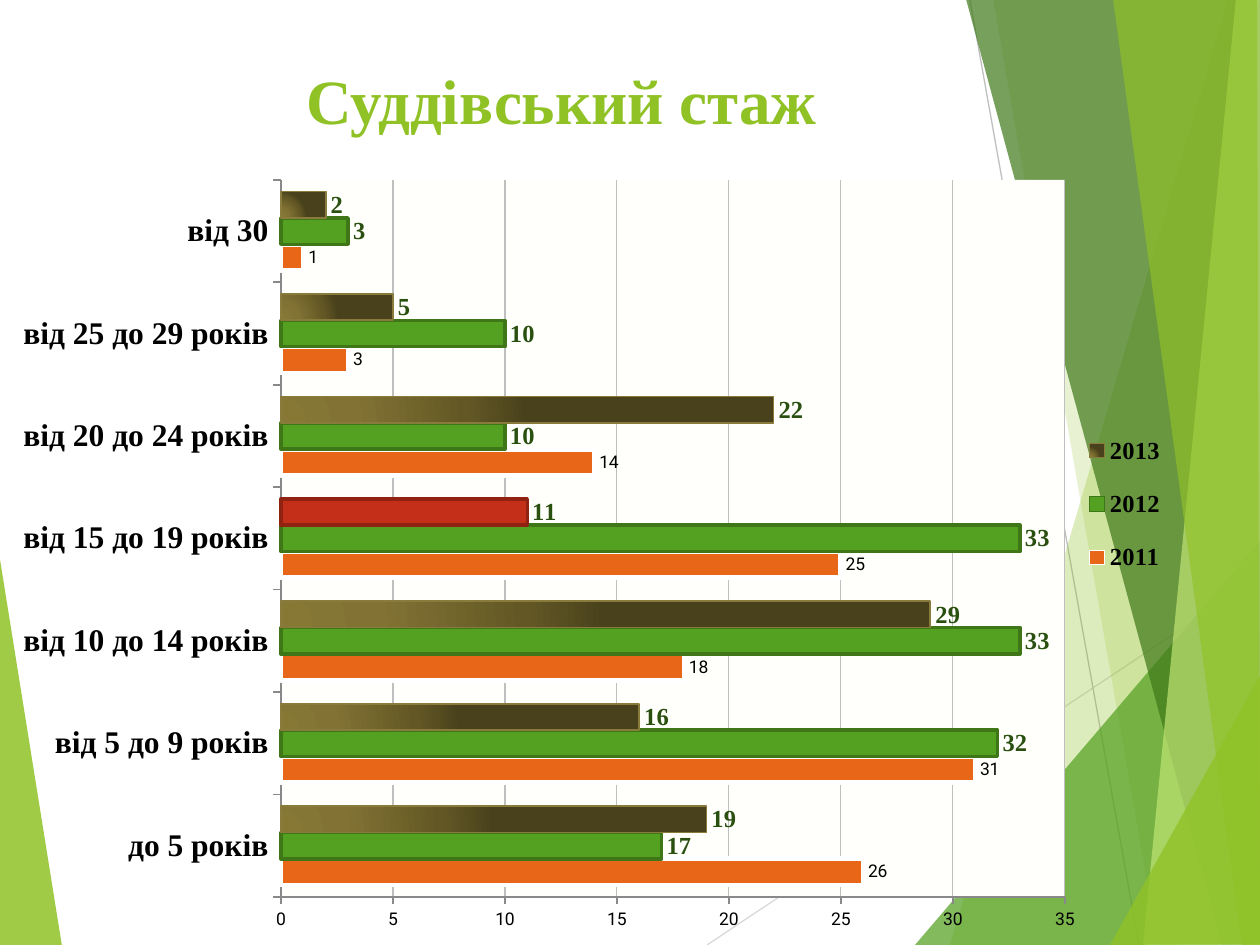
from lxml import etree
from pptx import Presentation
from pptx.chart.data import CategoryChartData
from pptx.dml.color import RGBColor
from pptx.enum.chart import XL_CHART_TYPE, XL_LABEL_POSITION, XL_LEGEND_POSITION, XL_TICK_MARK
from pptx.enum.shapes import MSO_CONNECTOR
from pptx.enum.text import MSO_ANCHOR, PP_ALIGN
from pptx.oxml import parse_xml
from pptx.oxml.ns import nsdecls, qn
from pptx.util import Emu, Pt

PX = 914400 / 126
BAR, RIGHT = XL_CHART_TYPE.BAR_CLUSTERED, XL_LEGEND_POSITION.RIGHT
OUTSIDE, OUTSIDE_END = XL_TICK_MARK.OUTSIDE, XL_LABEL_POSITION.OUTSIDE_END
STRAIGHT, MIDDLE, CENTER = MSO_CONNECTOR.STRAIGHT, MSO_ANCHOR.MIDDLE, PP_ALIGN.CENTER

BLACK = RGBColor(0x00, 0x00, 0x00)
WHITE = RGBColor(0xFF, 0xFF, 0xFF)
LIME = RGBColor(0x90, 0xC2, 0x26)
PALE_LIME = RGBColor(0xC0, 0xE4, 0x74)
GREEN = RGBColor(0x54, 0xA0, 0x21)
FOREST = RGBColor(0x3F, 0x78, 0x19)
GREEN_EDGE = RGBColor(0x3E, 0x76, 0x18)
LABEL_GREEN = RGBColor(0x2A, 0x50, 0x10)
ORANGE = RGBColor(0xE7, 0x66, 0x18)
RED = RGBColor(0xC4, 0x2F, 0x1A)
RED_EDGE = RGBColor(0x90, 0x22, 0x12)
BROWN = RGBColor(0x49, 0x41, 0x1B)
BROWN_EDGE = RGBColor(0x89, 0x7B, 0x3C)
IVORY = RGBColor(0xFF, 0xFF, 0xFB)
LIGHT_GRAY = RGBColor(0xD9, 0xD9, 0xD9)
GRAY = RGBColor(0xBF, 0xBF, 0xBF)
AXIS_GRAY = RGBColor(0x89, 0x89, 0x89)
GRADIENT = [(0, "877836"), (30, "827334"), (75, "635825"), (100, "49411B")]

SERIF, SANS = "Times New Roman", "Roboto"
SERIF_LABEL = {"size": Pt(14), "bold": True, "name": SERIF}
BAR_LABEL = {**SERIF_LABEL, "color": LABEL_GREEN}
PLAIN_LABEL = {"size": Pt(10), "name": SANS, "color": BLACK}

# Background facets: corner points in px, fill, opacity in percent
LEFT_FACET = ([(-1, 553), (62, 946), (-1, 945)], LIME, 85)
RIGHT_FACETS = [
    ([(1228, 0), (950, 945), (1262, 946), (1261, 1)], LIME, 30),
    ([(993, -1), (1158, 945), (1261, 945), (1261, -1)], LIME, 20),
    ([(915, 945), (1260, 541), (1261, 945)], GREEN, 72),
    ([(966, -1), (1222, 945), (1261, 944), (1261, -1)], FOREST, 70),
    ([(1236, -1), (1143, 945), (1261, 945), (1260, -1)], PALE_LIME, 70),
    ([(1113, -1), (1242, 945), (1260, 945), (1257, -1)], LIME, 65),
    ([(1110, 945), (1261, 674), (1261, 944)], LIME, 80),
]
RAYS = [((707, 945), (1261, 576), LIGHT_GRAY), ((970, 0), (1139, 945), GRAY)]

CATEGORIES = ["до 5 років", "від 5 до 9 років", "від 10 до 14 років", "від 15 до 19 років",
              "від 20 до 24 років", "від 25 до 29 років", "від 30"]
# Name, values, fill, edge, edge width, label font
SERIES = [
    ("2011", (26, 31, 18, 25, 14, 3, 1), ORANGE, WHITE, 2.75, PLAIN_LABEL),
    ("2012", (17, 32, 33, 33, 10, 10, 3), GREEN, GREEN_EDGE, 2, BAR_LABEL),
    ("2013", (19, 16, 29, 11, 22, 5, 2), BROWN, BROWN_EDGE, 1, BAR_LABEL),
]
CHART_BOX = (0, 165, 1196, 780)
PLOT_BOX = (281, 180, 784, 717)
LEGEND_BOX = (1080, 411, 90, 186)


def px(*lengths):
    return [Emu(round(length * PX)) for length in lengths]


def set_font(font, values):
    for name, value in values.items():
        if name == "color":
            font.color.rgb = value
        else:
            setattr(font, name, value)


def set_line(line, color, width):
    line.color.rgb = color
    line.width = Pt(width)


def add_facet(slide, points, color, opacity):
    builder = slide.shapes.build_freeform(*points[0], scale=PX)
    builder.add_line_segments(points[1:], close=True)
    shape = builder.convert_to_shape()
    shape.shadow.inherit = False
    shape.line.fill.background()
    shape.fill.solid()
    shape.fill.fore_color.rgb = color
    rgb = shape.element.spPr.find(f".//{qn('a:srgbClr')}")
    etree.SubElement(rgb, qn("a:alpha"), val=str(opacity * 1000))


def add_ray(slide, start, end, color):
    ray = slide.shapes.add_connector(STRAIGHT, *px(*start, *end))
    set_line(ray.line, color, 0.75)
    etree.SubElement(ray.element.spPr, qn("a:effectLst"))


def format_title(title):
    # The title comes after the background in drawing order
    title.element.getparent().append(title.element)
    title.left, title.top, title.width, title.height = px(63, 44, 998, 111)
    frame = title.text_frame
    frame.text = "Суддівський стаж"
    frame.vertical_anchor = MIDDLE
    paragraph = frame.paragraphs[0]
    paragraph.alignment = CENTER
    set_font(paragraph.runs[0].font, {"size": Pt(36), "bold": True, "name": SERIF, "color": LIME})


def layout_xml(box, inner=False):
    left, top, width, height = CHART_BOX
    shares = ((box[0] - left) / width, (box[1] - top) / height, box[2] / width, box[3] / height)
    target = '<c:layoutTarget val="inner"/>' if inner else ""
    modes = '<c:xMode val="edge"/><c:yMode val="edge"/>'
    sizes = "".join(f'<c:{tag} val="{share:.4f}"/>' for tag, share in zip("xywh", shares))
    return parse_xml(f'<c:layout {nsdecls("c")}><c:manualLayout>{target}{modes}{sizes}'
                     '</c:manualLayout></c:layout>')


def set_layout(element, layout, after=None):
    for old in element.findall(qn("c:layout")):
        element.remove(old)
    position = 0 if after is None else element.index(element.find(qn(after))) + 1
    element.insert(position, layout)


def use_radial_gradient(series):
    stops = "".join(f'<a:gs pos="{position * 1000}"><a:srgbClr val="{color}"/></a:gs>'
                    for position, color in GRADIENT)
    gradient = parse_xml(
        f'<a:gradFill {nsdecls("a")} rotWithShape="1"><a:gsLst>{stops}</a:gsLst><a:path path="circle">'
        '<a:fillToRect l="5000" t="100000" r="120000" b="10000"/></a:path></a:gradFill>')
    properties = series.format.fill._xPr
    properties.replace(properties.find(qn("a:solidFill")), gradient)


def format_series(series, fill, edge, width, label):
    series.format.fill.solid()
    series.format.fill.fore_color.rgb = fill
    set_line(series.format.line, edge, width)
    labels = series.data_labels
    labels.show_value = True
    labels.position = OUTSIDE_END
    set_font(labels.font, label)


def format_axis(axis, font):
    axis.major_tick_mark = OUTSIDE
    set_line(axis.format.line, AXIS_GRAY, 1)
    set_font(axis.tick_labels.font, font)


def add_experience_chart(slide):
    data = CategoryChartData()
    data.categories = CATEGORIES
    for name, values, *_ in SERIES:
        data.add_series(name, values)
    chart = slide.shapes.add_chart(BAR, *px(*CHART_BOX), data).chart
    chart.has_title = False
    set_font(chart.font, PLAIN_LABEL)

    # Bars
    plot = chart.plots[0]
    plot.gap_width, plot.overlap, plot.vary_by_categories = 89, 0, False
    for series, (_, _, *style) in zip(plot.series, SERIES):
        format_series(series, *style)
    latest = plot.series[2]
    use_radial_gradient(latest)
    highlight = latest.points[3].format
    highlight.fill.solid()
    highlight.fill.fore_color.rgb = RED
    set_line(highlight.line, RED_EDGE, 2)

    # Axes
    format_axis(chart.category_axis, {**SERIF_LABEL, "size": Pt(18), "color": BLACK})
    value_axis = chart.value_axis
    format_axis(value_axis, PLAIN_LABEL)
    value_axis.minimum_scale, value_axis.maximum_scale, value_axis.major_unit = 0, 35, 5
    value_axis.has_major_gridlines = True
    set_line(value_axis.major_gridlines.format.line, GRAY, 0.75)

    # Legend and plot area
    chart.has_legend = True
    chart.legend.position = RIGHT
    chart.legend.include_in_layout = False
    set_font(chart.legend.font, {**SERIF_LABEL, "color": BLACK})
    plot_area = chart.element.find(f".//{qn('c:plotArea')}")
    set_layout(plot_area, layout_xml(PLOT_BOX, inner=True))
    set_layout(chart.element.find(f".//{qn('c:legend')}"), layout_xml(LEGEND_BOX), "c:legendPos")
    plot_area.append(parse_xml(f'<c:spPr {nsdecls("c", "a")}><a:solidFill><a:srgbClr val="{IVORY}"/>'
                               '</a:solidFill></c:spPr>'))


def main():
    presentation = Presentation()
    presentation.slide_width, presentation.slide_height = px(1260, 945)
    slide = presentation.slides.add_slide(presentation.slide_layouts[5])
    add_facet(slide, *LEFT_FACET)
    for ray in RAYS:
        add_ray(slide, *ray)
    for facet in RIGHT_FACETS:
        add_facet(slide, *facet)
    format_title(slide.shapes.title)
    add_experience_chart(slide)
    presentation.save("out.pptx")


if __name__ == "__main__":
    main()
